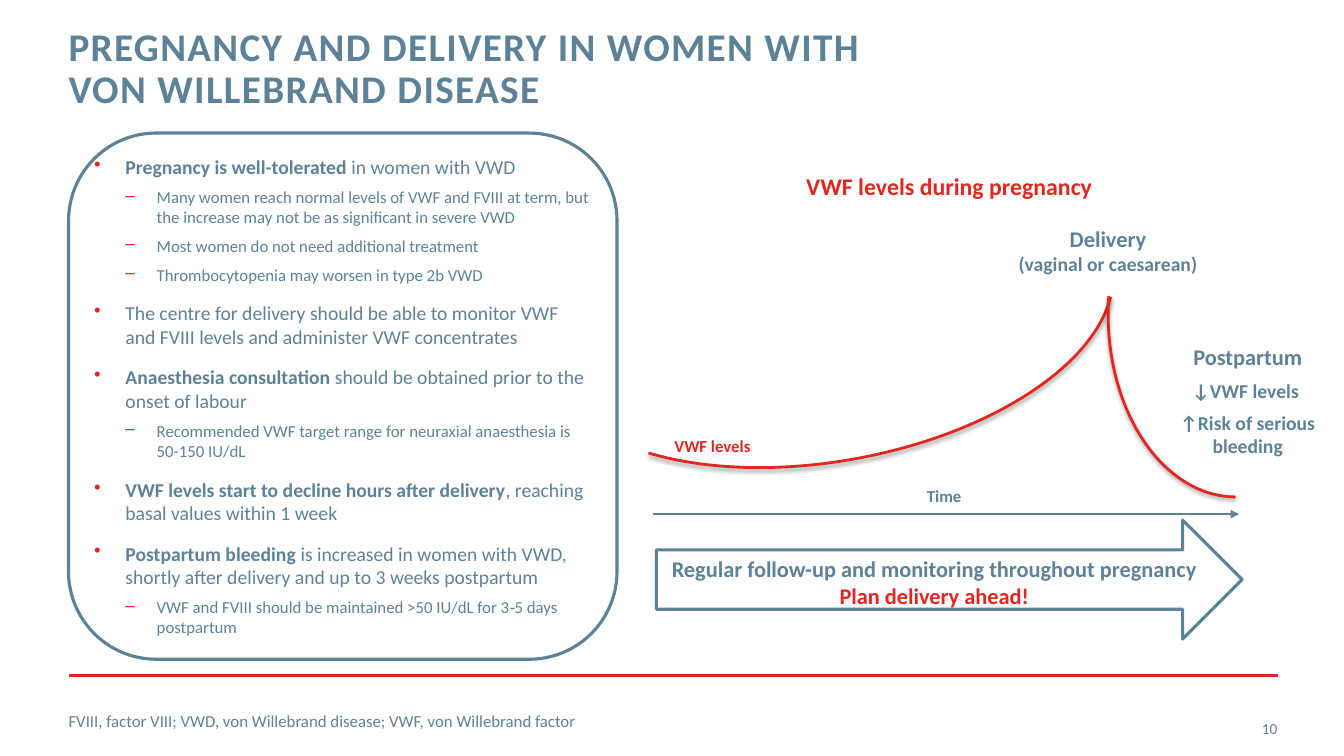
import pptx
import pptx.util
import pptx.dml.color
import pptx.enum.shapes
import pptx.enum.text
import pptx.oxml
import pptx.oxml.ns

Inches, Pt = pptx.util.Inches, pptx.util.Pt
SHAPE = pptx.enum.shapes.MSO_SHAPE
ANCHOR = pptx.enum.text.MSO_ANCHOR
ALIGN = pptx.enum.text.PP_ALIGN
COLORS = {"slate": "5D8298", "red": "E32620", "shadow": "000000"}
NS = pptx.oxml.ns.nsdecls("a")

TITLE = "PREGNANCY AND DELIVERY IN WOMEN WITH \nVON WILLEBRAND DISEASE"
# (level, bold lead, plain text)
BULLETS = [
    (0, "Pregnancy is well-tolerated ", "in women with VWD"),
    (1, "", "Many women reach normal levels of VWF and FVIII at term, but the increase "
            "may not be as significant in severe VWD"),
    (1, "", "Most women do not need additional treatment"),
    (1, "", "Thrombocytopenia may worsen in type 2b VWD"),
    (0, "", "The centre for delivery should be able to monitor VWF and FVIII levels "
            "and administer VWF concentrates"),
    (0, "Anaesthesia consultation ", "should be obtained prior to the onset of labour"),
    (1, "", "Recommended VWF target range for neuraxial anaesthesia is 50-150 IU/dL"),
    (0, "VWF levels start to decline hours after delivery",
     ", reaching basal values within 1 week"),
    (0, "Postpartum bleeding ", "is increased in women with VWD, shortly after delivery "
                                "and up to 3 weeks postpartum"),
    (1, "", "VWF and FVIII should be maintained >50 IU/dL for 3‑5 days postpartum"),
]
# bullet sign, text size, space before
LEVELS = [("•", 14, 12), ("–", 12, 6)]
INDENT = 0.31

# box, rotation, start and end of the arc
CURVES = [
    ((6.77, 0.27, 2.91, 5.7), 79.7, (166.04, 37.7)),
    ((10.99, 1.31, 2.53, 3.62), 180, (162, 4.92)),
]
# box, alignment, bold, inset, anchor, space after, paragraphs of (text, size, colour)
FLUSH, PADDED = (0, 0), (0.1, 0.05)
LABELS = [
    ((6.64, 1.7, 5.55, 0.23), ALIGN.CENTER, True, FLUSH, ANCHOR.TOP, 0,
     [("VWF levels during pregnancy", 17, "red")]),
    ((6.48, 4.77, 5.77, 0.3), ALIGN.CENTER, True, PADDED, ANCHOR.TOP, 0,
     [("Time", 12, "slate")]),
    ((6.59, 4.27, 1.06, 0.3), ALIGN.LEFT, True, PADDED, ANCHOR.TOP, 0,
     [("VWF levels", 12, "red")]),
    ((9.86, 2.18, 2.26, 0.61), ALIGN.CENTER, True, PADDED, ANCHOR.TOP, 0,
     [("Delivery", 16, "slate"), ("(vaginal or caesarean)", 14, "slate")]),
    ((11.43, 3.36, 1.89, 1.73), ALIGN.CENTER, True, PADDED, ANCHOR.TOP, 6,
     [("Postpartum", 16, "slate"), ("↓VWF levels ", 14, "slate"),
      ("↑Risk of serious bleeding", 14, "slate")]),
    ((0.68, 6.95, 8.88, 0.4), ALIGN.LEFT, False, FLUSH, ANCHOR.MIDDLE, 0,
     [("FVIII, factor VIII; VWD, von Willebrand disease; VWF, von Willebrand factor",
       12, "slate")]),
    ((11.81, 7.03, 0.86, 0.4), ALIGN.RIGHT, False, FLUSH, ANCHOR.MIDDLE, 0,
     [("10", 11, "slate")]),
]


def rgb(name):
    return pptx.dml.color.RGBColor.from_string(COLORS[name])


def box_of(values):
    return [Inches(v) for v in values]


def set_frame(tf, inset, anchor):
    tf.word_wrap = True
    tf.margin_left = tf.margin_right = Inches(inset[0])
    tf.margin_top = tf.margin_bottom = Inches(inset[1])
    tf.vertical_anchor = anchor
    return tf


def add_text(p, text, size, color, bold):
    """Add runs to p, with a line break at each newline."""
    runs = []
    for i, line in enumerate(text.split("\n")):
        if i:
            p.add_line_break()
        r = p.add_run()
        r.text = line
        r.font.name, r.font.size, r.font.bold = "Calibri", Pt(size), bold
        r.font.color.rgb = rgb(color)
        runs.append(r)
    return runs


def paragraph(tf, i):
    return tf.add_paragraph() if i else tf.paragraphs[0]


def add_outline(s, kind, box, color, width):
    sp = s.shapes.add_shape(kind, *box_of(box))
    sp.shadow.inherit = False
    sp.fill.background()
    sp.line.color.rgb = rgb(color)
    sp.line.width = Pt(width)
    return sp


def add_line(s, x1, x2, y, color):
    line = s.shapes.add_connector(pptx.enum.shapes.MSO_CONNECTOR.STRAIGHT,
                                  *box_of((x1, y, x2, y)))
    line.line.color.rgb = rgb(color)
    line.line.width = Pt(2)
    line._element.spPr.append(pptx.oxml.parse_xml(f"<a:effectLst {NS}/>"))
    return line


def add_bullets(tf):
    for i, (level, lead, rest) in enumerate(BULLETS):
        sign, size, before = LEVELS[level]
        p = paragraph(tf, i)
        p.level = level
        p.alignment = ALIGN.LEFT
        pPr = p._p.get_or_add_pPr()
        pPr.set("marL", str(Inches(INDENT * (level + 1))))
        pPr.set("indent", str(-Inches(INDENT)))
        for xml in (f'<a:buClr {NS}><a:srgbClr val="{COLORS["red"]}"/></a:buClr>',
                    f'<a:buChar {NS} char="{sign}"/>'):
            pPr.append(pptx.oxml.parse_xml(xml))
        if i:
            p.space_before = Pt(before)
        if lead:
            add_text(p, lead, size, "slate", True)
        add_text(p, rest, size, "slate", False)


def add_curve(s, box, rotation, angles):
    sp = add_outline(s, SHAPE.ARC, box, "red", 2)
    sp.rotation = rotation
    sp.adjustments[0], sp.adjustments[1] = angles
    effects = sp._element.spPr.find(pptx.oxml.ns.qn("a:effectLst"))
    effects.append(pptx.oxml.parse_xml(
        f'<a:outerShdw {NS} blurRad="{Pt(3.1)}" dist="{Pt(1.6)}" dir="5400000" '
        f'rotWithShape="0"><a:srgbClr val="{COLORS["shadow"]}">'
        '<a:alpha val="38000"/></a:srgbClr></a:outerShdw>'))


def add_label(s, box, align, bold, inset, anchor, after, lines):
    tf = set_frame(s.shapes.add_textbox(*box_of(box)).text_frame, inset, anchor)
    for i, (text, size, color) in enumerate(lines):
        p = paragraph(tf, i)
        p.alignment = align
        p.space_after = Pt(after)
        add_text(p, text, size, color, bold)


def main():
    prs = pptx.Presentation()
    prs.slide_width, prs.slide_height = Inches(13.33), Inches(7.5)
    s = prs.slides.add_slide(prs.slide_layouts[5])

    title = s.shapes.title
    title.left, title.top, title.width, title.height = box_of((0.68, 0.27, 9.56, 0.88))
    p = set_frame(title.text_frame, FLUSH, ANCHOR.TOP).paragraphs[0]
    p.alignment = ALIGN.LEFT
    p.line_spacing = Pt(30)
    for r in add_text(p, TITLE, 28, "slate", True):
        r.font._element.set("spc", "100")

    add_line(s, 0.68, 12.68, 6.7, "red")
    panel = add_outline(s, SHAPE.ROUNDED_RECTANGLE, (0.68, 1.32, 5.44, 5.22), "slate", 2.25)
    add_bullets(set_frame(panel.text_frame, FLUSH, ANCHOR.MIDDLE))

    for curve in CURVES:
        add_curve(s, *curve)
    time_axis = add_line(s, 6.48, 12.29, 5.1, "slate")
    time_axis.line._get_or_add_ln().append(
        pptx.oxml.parse_xml(f'<a:tailEnd {NS} type="triangle"/>'))

    arrow = add_outline(s, SHAPE.RIGHT_ARROW, (6.51, 5.16, 5.81, 1.18), "slate", 2.25)
    p = set_frame(arrow.text_frame, PADDED, ANCHOR.TOP).paragraphs[0]
    p.alignment = ALIGN.CENTER
    p.space_after = Pt(6)
    add_text(p, "Regular follow-up and monitoring throughout pregnancy", 16, "slate", True)
    p.add_line_break()
    add_text(p, "Plan delivery ahead!", 16, "red", True)

    for label in LABELS:
        add_label(s, *label)
    prs.save("out.pptx")


if __name__ == "__main__":
    main()
